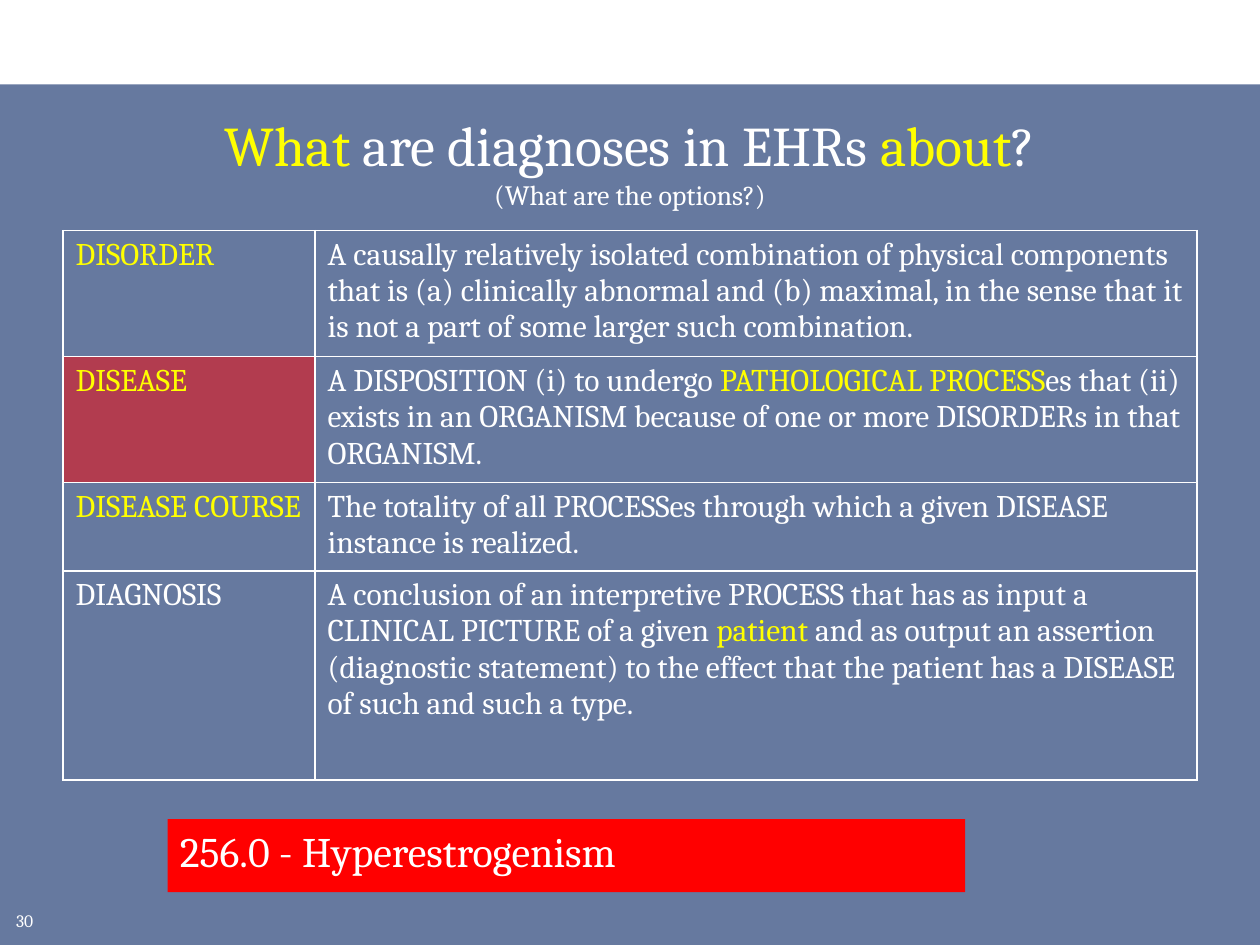
import dataclasses

import pptx
import pptx.dml.color
import pptx.enum.shapes
import pptx.enum.text
import pptx.oxml
import pptx.oxml.ns
import pptx.util
from pptx.util import Inches


def rgb(code):
    return pptx.dml.color.RGBColor.from_string(code)


@dataclasses.dataclass(frozen=True)
class Theme:
    font: str = "Cambria"
    navy: str = "002060"
    red: str = "FF0000"
    white: str = "FFFFFF"
    yellow: str = "FFFF00"
    title: int = 32
    subtitle: int = 16
    code: int = 24
    body: int = 18
    number: int = 10


THEME = Theme()

DEFINITIONS = [
    ("*DISORDER*",
     "A causally relatively isolated combination of physical components that is "
     "(a) clinically abnormal and (b) maximal, in the sense that it is not a part "
     "of some larger such combination."),
    ("*DISEASE*",
     "A DISPOSITION (i) to undergo *PATHOLOGICAL PROCESS*es that (ii) exists in an "
     "ORGANISM because of one or more DISORDERs in that ORGANISM."),
    ("*DISEASE COURSE*",
     "The totality of all PROCESSes through which a given DISEASE instance is realized."),
    ("DIAGNOSIS",
     "A conclusion of an interpretive PROCESS that has as input a CLINICAL PICTURE of "
     "a given *patient* and as output an assertion (diagnostic statement) to the effect "
     "that the patient has a DISEASE of such and such a type."),
]
COLUMN_WIDTHS = (2, 7)
ROW_HEIGHTS = (0.99, 1, 0.69, 1.66)


def write(para, text, size):
    """Write white text, with the parts between asterisks in yellow."""
    para.font.name = THEME.font
    para.font.size = pptx.util.Pt(size)
    para.font.color.rgb = rgb(THEME.white)
    for index, part in enumerate(text.split("*")):
        if part:
            span = para.add_run()
            span.text = part
            if index % 2:
                span.font.color.rgb = rgb(THEME.yellow)


def add_panel(page, box, color, opacity=100):
    panel = page.shapes.add_shape(
        pptx.enum.shapes.MSO_SHAPE.RECTANGLE, *map(Inches, box))
    panel.shadow.inherit = False
    panel.line.fill.background()
    panel.fill.solid()
    panel.fill.fore_color.rgb = rgb(color)
    if opacity < 100:
        tint = panel.fill._xPr.find(".//" + pptx.oxml.ns.qn("a:srgbClr"))
        tint.append(pptx.oxml.parse_xml(
            f'<a:alpha {pptx.oxml.ns.nsdecls("a")} val="{opacity * 1000}"/>'))
    return panel


def add_text(page, box, text, size):
    frame = page.shapes.add_textbox(*map(Inches, box)).text_frame
    frame.word_wrap = True
    write(frame.paragraphs[0], text, size)
    return frame.paragraphs[0]


def add_title(page, box):
    para = add_text(page, box, "*What* are diagnoses in EHRs *about*?", THEME.title)
    para.alignment = pptx.enum.text.PP_ALIGN.CENTER
    para.add_line_break()
    subtitle = para.add_run()
    subtitle.text = "(What are the options?)"
    subtitle.font.size = pptx.util.Pt(THEME.subtitle)


def outline_cell(cell):
    properties = cell._tc.get_or_add_tcPr()
    for index, side in enumerate(("lnL", "lnR", "lnT", "lnB")):
        properties.insert(index, pptx.oxml.parse_xml(
            f'<a:{side} {pptx.oxml.ns.nsdecls("a")} w="{pptx.util.Pt(1)}"><a:solidFill>'
            f'<a:srgbClr val="{THEME.white}"/></a:solidFill></a:{side}>'))


def add_definitions(page, box):
    table = page.shapes.add_table(
        len(DEFINITIONS), len(COLUMN_WIDTHS), *map(Inches, box)).table
    table.first_row = table.horz_banding = False
    for column, width in zip(table.columns, COLUMN_WIDTHS):
        column.width = Inches(width)
    for row, height, texts in zip(table.rows, ROW_HEIGHTS, DEFINITIONS):
        row.height = Inches(height)
        for cell, text in zip(row.cells, texts):
            cell.fill.background()
            outline_cell(cell)
            write(cell.text_frame.paragraphs[0], text, THEME.body)


def add_code(page, box):
    frame = add_panel(page, box, THEME.red).text_frame
    frame.word_wrap = True
    frame.vertical_anchor = pptx.enum.text.MSO_ANCHOR.TOP
    para = frame.paragraphs[0]
    para.alignment = pptx.enum.text.PP_ALIGN.LEFT
    write(para, "256.0 - Hyperestrogenism", THEME.code)


def main():
    deck = pptx.Presentation()
    deck.slide_width, deck.slide_height = Inches(10), Inches(7.5)
    page = deck.slides.add_slide(deck.slide_layouts[6])
    add_panel(page, (0, 0.67, 10, 6.83), THEME.navy, opacity=60)
    add_text(page, (0.03, 7.17, 0.39, 0.25), "30", THEME.number)
    add_panel(page, (0.5, 2.83, 2, 1), THEME.red, opacity=50)
    add_definitions(page, (0.5, 1.83, sum(COLUMN_WIDTHS), sum(ROW_HEIGHTS)))
    add_code(page, (1.33, 6.5, 6.33, 0.58))
    add_title(page, (0.25, 0.83, 9.5, 0.83))
    deck.save("out.pptx")


if __name__ == "__main__":
    main()
